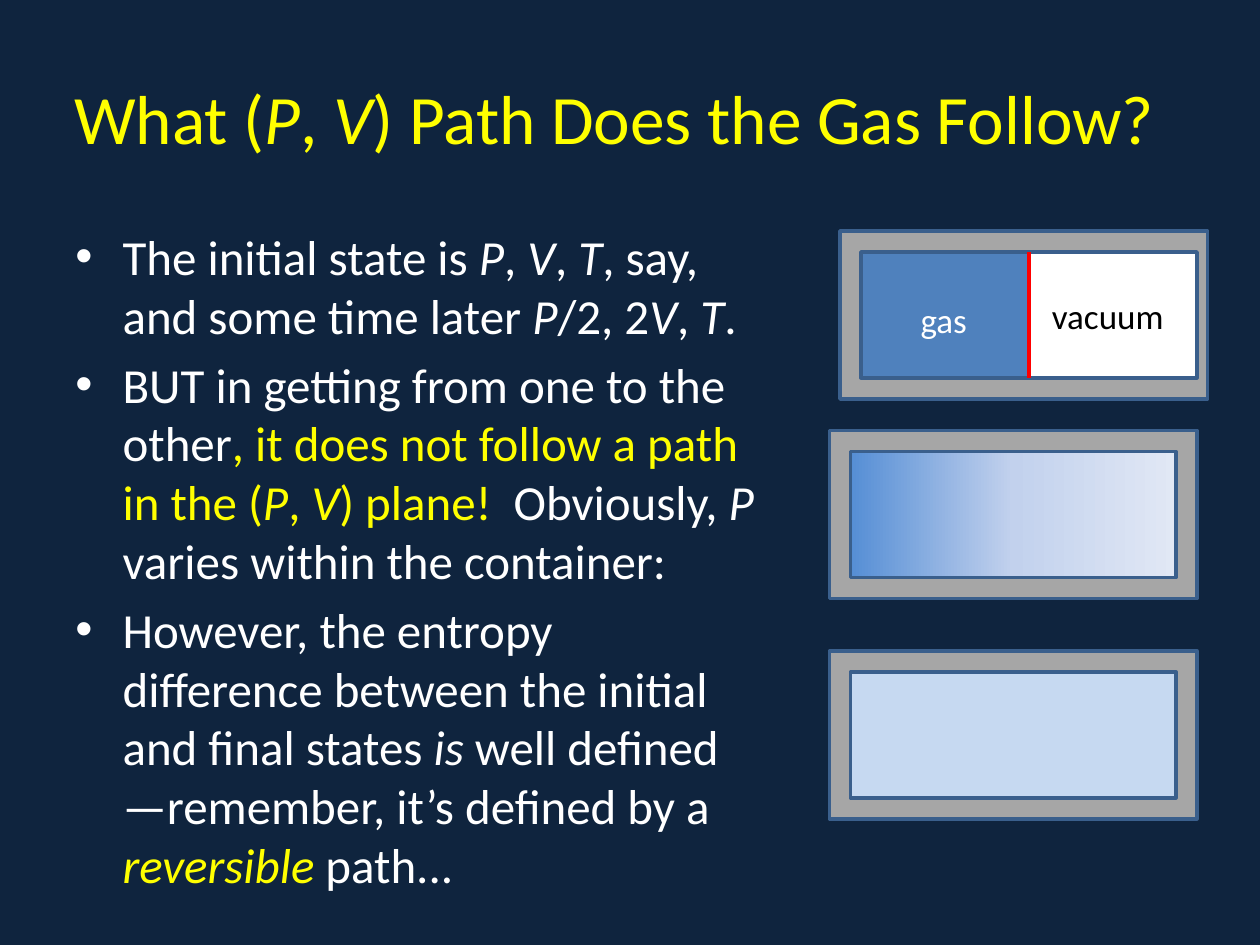
from copy import deepcopy

from pptx import Presentation
from pptx.dml.color import RGBColor
from pptx.enum.shapes import MSO_CONNECTOR as CONN, MSO_SHAPE as SHAPE
from pptx.enum.text import MSO_ANCHOR as ANCHOR, PP_ALIGN as ALIGN
from pptx.oxml.ns import qn
from pptx.util import Pt
from lxml.etree import SubElement

PX = 7620
FONT = "Calibri"
NAVY = RGBColor(0x0F, 0x24, 0x3E)
YELLOW = RGBColor(0xFF, 0xFF, 0x00)
WHITE = RGBColor(0xFF, 0xFF, 0xFF)
BLACK = RGBColor(0x00, 0x00, 0x00)
RED = RGBColor(0xFF, 0x00, 0x00)
GREY = RGBColor(0xA6, 0xA6, 0xA6)
EDGE = RGBColor(0x3A, 0x5F, 0x8C)
GAS = RGBColor(0x4F, 0x81, 0xBD)
THIN_GAS = RGBColor(0xC6, 0xD9, 0xF1)
SPREADING = [(0, RGBColor(0x55, 0x8E, 0xD5)),
             (0.5, RGBColor(0xC2, 0xD1, 0xED)),
             (1, RGBColor(0xE1, 0xE8, 0xF5))]

TITLE = "What (*P*, *V*) Path Does the Gas Follow?"
BULLETS = [
    "The initial state is *P*, *V*, *T*, say, and some time later *P*/2, 2*V*, *T*.",
    "BUT in getting from one to the other|, it does not follow a path in the "
    "(*P*, *V*) plane!  |Obviously, *P* varies within the container:",
    "However, the entropy difference between the initial and final states *is* "
    "well defined—remember, it’s defined by a |*reversible*| path...",
]


def px(*lengths):
    """Turn lengths in px into EMU."""
    return [n * PX for n in lengths]


def add_runs(p, text, size, color, accent=YELLOW):
    """Fill a paragraph: *...* is italic and |...| takes the accent colour."""
    for i, part in enumerate(text.split("|")):
        for j, piece in enumerate(part.split("*")):
            if piece:
                r = p.add_run()
                r.text = piece
                r.font.name, r.font.size = FONT, Pt(size)
                r.font.italic = j % 2 == 1
                r.font.color.rgb = accent if i % 2 else color


def set_title(s, text, box):
    """Place and format the title."""
    sp = s.shapes.title
    sp.left, sp.top, sp.width, sp.height = px(*box)
    tf = sp.text_frame
    tf.vertical_anchor = ANCHOR.MIDDLE
    p = tf.paragraphs[0]
    p.alignment = ALIGN.CENTER
    add_runs(p, text, 39.6, YELLOW)


def add_text(s, box):
    """Add a wrapping text box and return its frame."""
    tf = s.shapes.add_textbox(*px(*box)).text_frame
    tf.word_wrap = True
    return tf


def add_bullets(s, items, box):
    """Add a bulleted list."""
    tf = add_text(s, box)
    for i, item in enumerate(items):
        p = tf.add_paragraph() if i else tf.paragraphs[0]
        p.space_before = Pt(5.6)
        add_runs(p, item, 28, WHITE)
        pPr = p._p.get_or_add_pPr()
        pPr.set("marL", str(45 * PX))
        pPr.set("indent", str(-45 * PX))
        SubElement(pPr, qn("a:buFont")).set("typeface", "Arial")
        SubElement(pPr, qn("a:buChar")).set("char", "•")


def add_label(s, text, color, box):
    """Add a one-line label."""
    add_runs(add_text(s, box).paragraphs[0], text, 20, color)


def add_rect(shapes, color, box):
    """Add an outlined rectangle."""
    sp = shapes.add_shape(SHAPE.RECTANGLE, *px(*box))
    sp.shadow.inherit = False
    sp.fill.solid()
    sp.fill.fore_color.rgb = color
    sp.line.color.rgb = EDGE
    sp.line.width = Pt(2)
    return sp


def set_gradient(sp, stops):
    """Fill a shape with a left-to-right gradient of three stops."""
    sp.fill.gradient()
    sp.fill.gradient_angle = 0
    gs_list = sp._element.spPr.find(".//" + qn("a:gsLst"))
    gs_list.append(deepcopy(gs_list[-1]))
    for stop, (position, color) in zip(sp.fill.gradient_stops, stops):
        stop.position = position
        stop.color.rgb = color


def add_partition(shapes, x, top, bottom):
    """Add the red wall between gas and vacuum."""
    line = shapes.add_connector(CONN.STRAIGHT, *px(x, top, x, bottom))
    line.line.color.rgb = RED
    line.line.width = Pt(2.25)
    SubElement(line._element.spPr, qn("a:effectLst"))


def add_container(shapes, x, y, chambers, width):
    """Add a grey container with equally wide chambers side by side."""
    add_rect(shapes, GREY, (x, y, 350, 160))
    return [add_rect(shapes, color, (x + 20 + i * width, y + 20, width, 120))
            for i, color in enumerate(chambers)]


def main():
    """Build the slide."""
    prs = Presentation()
    prs.slide_width, prs.slide_height = px(1200, 900)
    s = prs.slides.add_slide(prs.slide_layouts[5])
    s.background.fill.solid()
    s.background.fill.fore_color.rgb = NAVY
    set_title(s, TITLE, (30, 36, 1110, 150))
    add_bullets(s, BULLETS, (60, 210, 670, 660))

    initial = s.shapes.add_group_shape().shapes
    add_container(initial, 800, 220, [GAS, WHITE], 160)
    add_partition(initial, 980, 240, 360)
    add_label(s, "vacuum", BLACK, (990, 275, 150, 53))
    add_label(s, "gas", WHITE, (865, 278, 110, 53))

    spreading, = add_container(s.shapes, 790, 410, [THIN_GAS], 310)
    set_gradient(spreading, SPREADING)
    add_container(s.shapes, 790, 620, [THIN_GAS], 310)
    prs.save("out.pptx")


if __name__ == "__main__":
    main()
